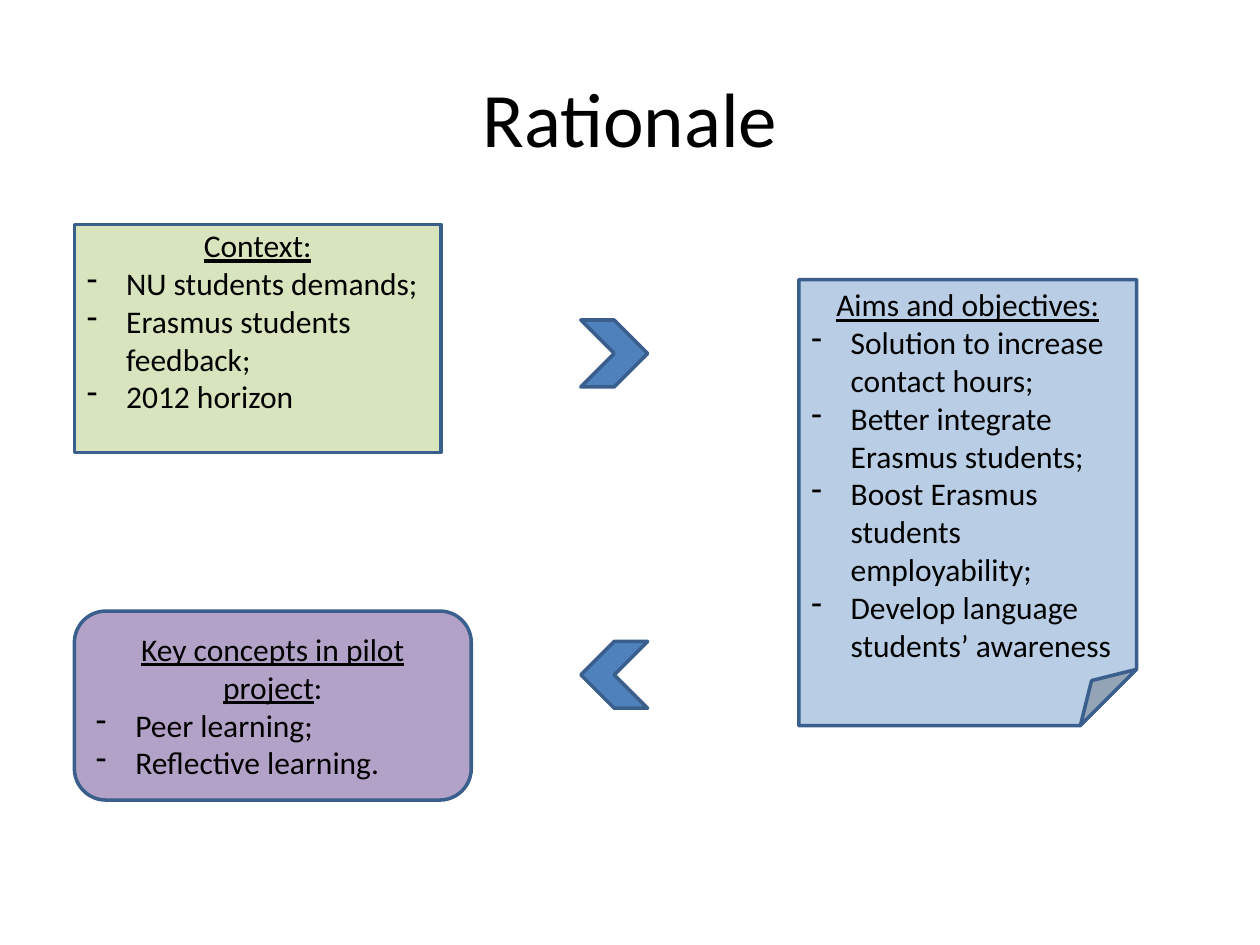
from pptx import Presentation
from pptx.dml.color import RGBColor
from pptx.enum.shapes import MSO_SHAPE as SHAPE
from pptx.enum.text import MSO_ANCHOR as ANCHOR, PP_ALIGN as ALIGN
from pptx.oxml.ns import qn
from pptx.util import Pt
from lxml import etree

FONT = "Calibri"
COLORS = {
    "text": "000000",
    "line": "3A5F8C",
    "arrow": "4F81BD",
    "context": "D7E4BD",
    "aims": "B9CDE5",
    "concepts": "B3A2C7",
}
INDENT = Pt(22.5)


def rgb(name):
    return RGBColor.from_string(COLORS[name])


def format_runs(p, size, underline=False):
    for r in p.runs:
        r.font.name = FONT
        r.font.size = Pt(size)
        r.font.color.rgb = rgb("text")
        r.font.underline = underline


def add_dash(p):
    pPr = p._p.get_or_add_pPr()
    pPr.set("marL", str(INDENT))
    pPr.set("indent", str(-INDENT))
    etree.SubElement(pPr, qn("a:buFontTx"))
    etree.SubElement(pPr, qn("a:buChar")).set("char", "-")


def add_outlined(slide, kind, box, fill):
    sp = slide.shapes.add_shape(kind, *(Pt(v) for v in box))
    sp.shadow.inherit = False
    sp.fill.solid()
    sp.fill.fore_color.rgb = rgb(fill)
    sp.line.color.rgb = rgb("line")
    sp.line.width = Pt(2)
    return sp


def add_title(slide, box, text):
    tf = slide.shapes.add_textbox(*(Pt(v) for v in box)).text_frame
    tf.word_wrap = True
    tf.vertical_anchor = ANCHOR.MIDDLE
    tf.text = text
    p = tf.paragraphs[0]
    p.alignment = ALIGN.CENTER
    format_runs(p, 44)


def add_panel(slide, kind, box, fill, heading, items, tail="", anchor=ANCHOR.MIDDLE, top=3.6):
    """Panel with an underlined heading, a plain tail and dashed items."""
    tf = add_outlined(slide, kind, box, fill).text_frame
    tf.word_wrap = True
    tf.vertical_anchor = anchor
    tf.margin_top = Pt(top)
    tf.text = heading
    p = tf.paragraphs[0]
    p.alignment = ALIGN.CENTER
    format_runs(p, 18, underline=True)
    if tail:
        p.add_run().text = tail
        format_runs(p, 18)
        p.runs[0].font.underline = True
    for item in items:
        p = tf.add_paragraph()
        p.text = item
        p.alignment = ALIGN.LEFT
        add_dash(p)
        format_runs(p, 18)


def add_chevron(slide, box, rotation=0):
    add_outlined(slide, SHAPE.CHEVRON, box, "arrow").rotation = rotation


def build_rationale(prs):
    slide = prs.slides.add_slide(prs.slide_layouts[6])
    add_title(slide, (36, 21.6, 648, 90), "Rationale")

    # Left column: context above, key concepts below
    add_panel(slide, SHAPE.RECTANGLE, (42.5, 128.2, 209.5, 130.3), "context",
              "Context:",
              ["NU students demands;", "Erasmus students feedback;", "2012 horizon"],
              anchor=ANCHOR.TOP, top=1)
    add_panel(slide, SHAPE.FLOWCHART_ALTERNATE_PROCESS, (42.5, 349.2, 226.8, 108),
              "concepts", "Key concepts in pilot project",
              ["Peer learning;", "Reflective learning."], tail=":")

    # Right column: aims
    add_panel(slide, SHAPE.FOLDED_CORNER, (456.5, 159.8, 193, 254.9), "aims",
              "Aims and objectives:",
              ["Solution to increase contact hours;",
               "Better integrate Erasmus students;",
               "Boost Erasmus students employability;",
               "Develop language students’ awareness"])

    # Chevrons between the columns
    for y, rotation in ((182.9, 0), (366.5, 180)):
        add_chevron(slide, (331.9, y, 38.2, 38.2), rotation)


def main():
    prs = Presentation()
    prs.slide_width, prs.slide_height = Pt(720), Pt(540)
    build_rationale(prs)
    prs.save("out.pptx")


if __name__ == "__main__":
    main()
